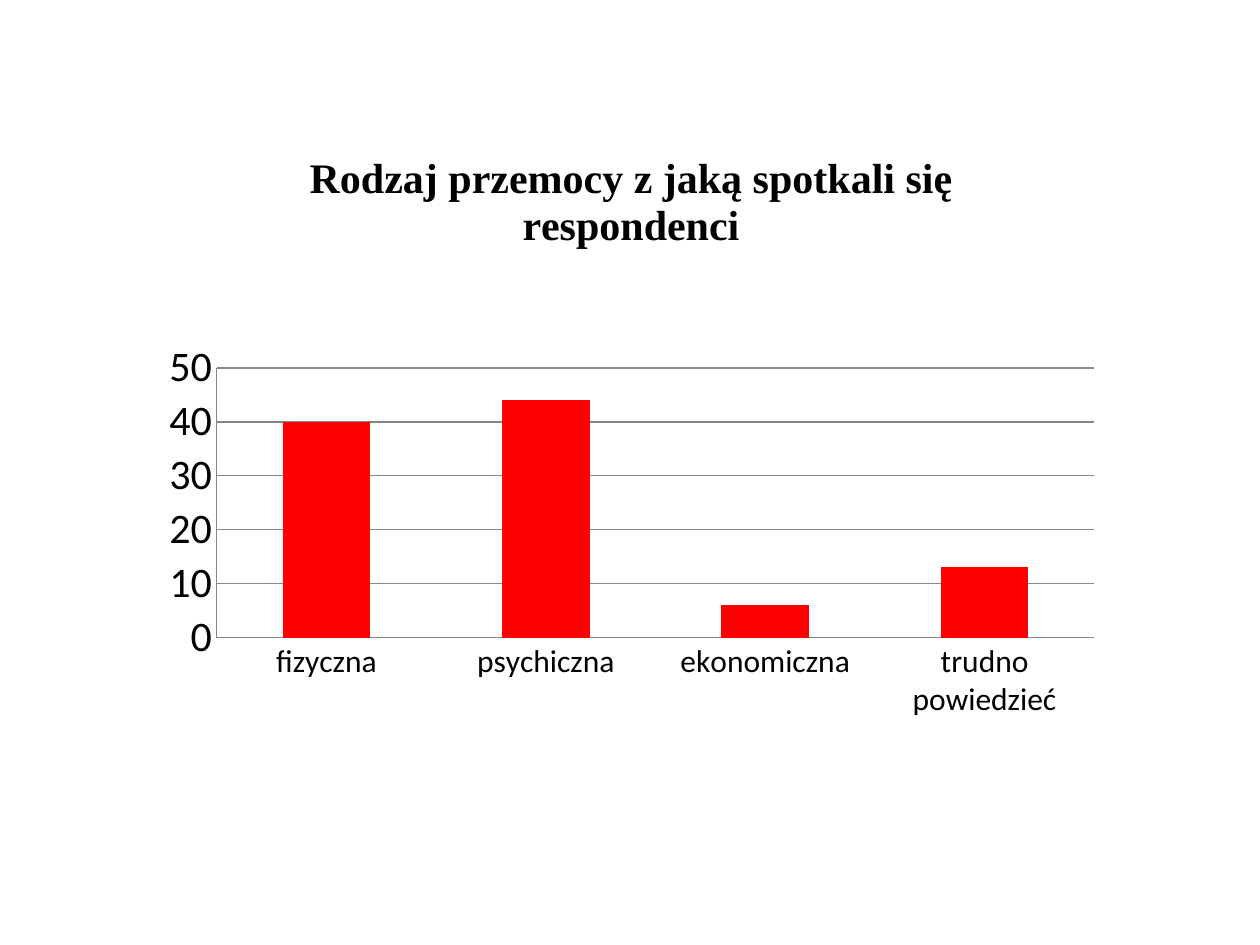
from lxml import etree
from pptx import Presentation
from pptx.chart.data import CategoryChartData as ChartData
from pptx.dml.color import RGBColor as RGB
from pptx.enum.chart import XL_CHART_TYPE as Kind, XL_TICK_MARK as Tick
from pptx.oxml import parse_xml
from pptx.oxml.ns import nsdecls, qn
from pptx.util import Inches, Pt

BLACK = RGB(0, 0, 0)
RED = RGB(255, 0, 0)
GREY = RGB(0x87, 0x87, 0x87)

TITLE = "Rodzaj przemocy z jaką spotkali się respondenci"
DATA = {"fizyczna": 40, "psychiczna": 44, "ekonomiczna": 6,
        "trudno powiedzieć": 13}


def style(font, size, name="Calibri", bold=False):
    font.size, font.name, font.bold = Pt(size), name, bold
    font.color.rgb = BLACK


def put_text(frame, text, **form):
    run = frame.paragraphs[0].add_run()
    run.text = text
    style(run.font, **form)


def layout(inner=False, **edges):
    """Manual chart layout, in fractions of the chart area."""
    node = parse_xml(f"<c:layout {nsdecls('c')}><c:manualLayout/></c:layout>")
    marks = {"layoutTarget": "inner"} if inner else {}
    marks |= {"xMode": "edge", "yMode": "edge", **edges}
    for tag, val in marks.items():
        etree.SubElement(node[0], qn(f"c:{tag}")).set("val", str(val))
    return node


def set_layout(parent, node, spot):
    for old in parent.findall(qn("c:layout")):
        parent.remove(old)
    parent.insert(spot, node)


def add_bars(slide, left, top, width, height):
    data = ChartData()
    data.categories = list(DATA)
    data.add_series("Series 1", list(DATA.values()))
    chart = slide.shapes.add_chart(Kind.COLUMN_CLUSTERED, left, top,
                                   width, height, data).chart
    style(chart.font, 10)
    chart.has_legend = False

    # Title
    chart.has_title = True
    title = chart.chart_title
    put_text(title.text_frame, TITLE, size=24, name="Times New Roman",
             bold=True)
    title.include_in_layout = False
    set_layout(title._element, layout(x=0.17, y=0.04), 1)

    # Axes
    cat, val = chart.category_axis, chart.value_axis
    for axis, size in ((cat, 18), (val, 24)):
        axis.major_tick_mark = axis.minor_tick_mark = Tick.NONE
        style(axis.tick_labels.font, size)
        axis.format.line.color.rgb = GREY
    val.minimum_scale, val.maximum_scale, val.major_unit = 0, 50, 10
    val.has_major_gridlines = True
    val.major_gridlines.format.line.color.rgb = GREY

    # Bars
    plot = chart.plots[0]
    plot.gap_width = 150
    plot.vary_by_categories = False
    fill = plot.series[0].format.fill
    fill.solid()
    fill.fore_color.rgb = RED
    area = chart._chartSpace.chart.plotArea
    set_layout(area, layout(inner=True, x=0.084, y=0.374, w=0.885, h=0.4), 0)


def main():
    deck = Presentation()
    deck.slide_width, deck.slide_height = Inches(10), Inches(7.5)
    slide = deck.slides.add_slide(deck.slide_layouts[6])
    add_bars(slide, Inches(1.06), Inches(0.92), Inches(7.87), Inches(5.35))
    deck.save("out.pptx")


if __name__ == "__main__":
    main()
